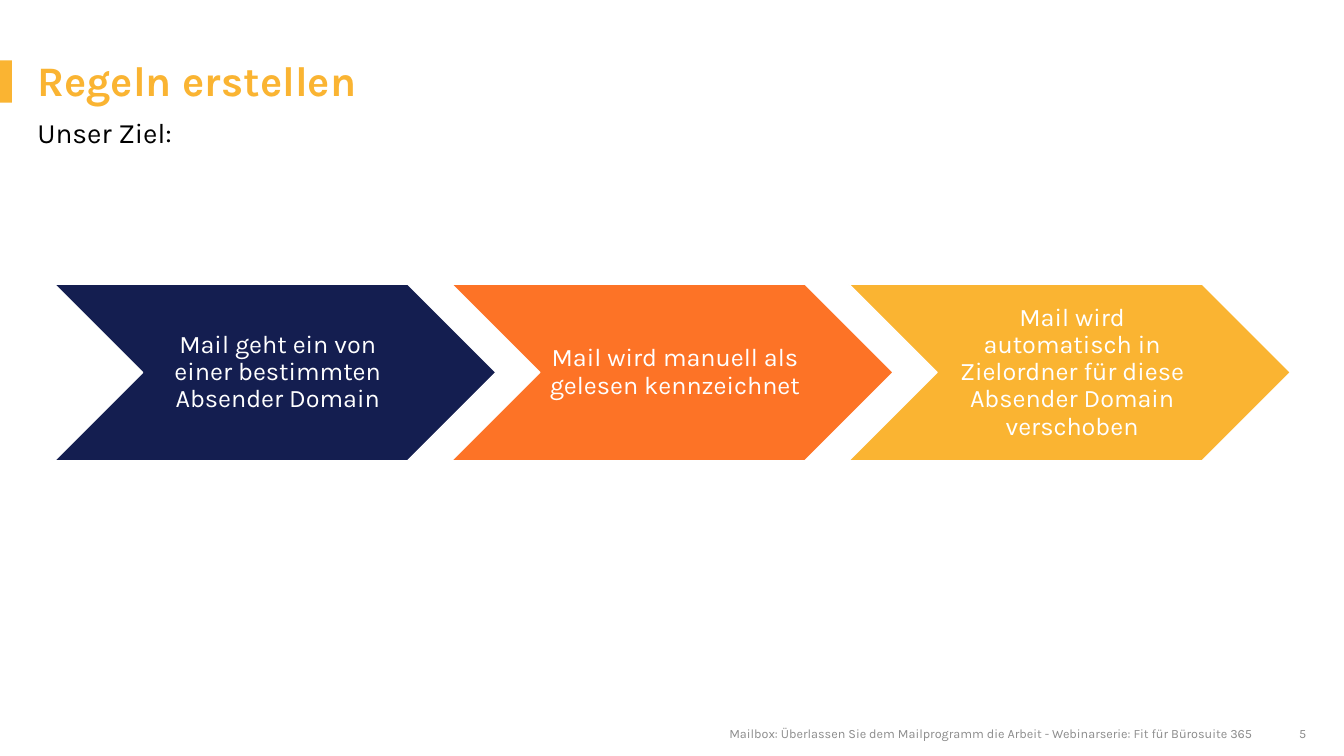
from dataclasses import dataclass

from pptx import Presentation
from pptx.dml.color import RGBColor
from pptx.enum.shapes import MSO_SHAPE
from pptx.enum.text import MSO_ANCHOR, MSO_AUTO_SIZE, PP_ALIGN
from pptx.util import Cm, Pt


@dataclass(frozen=True)
class Theme:
    font: str = "Karla"
    navy: str = "141E50"
    orange: str = "FD7326"
    yellow: str = "FAB432"
    white: str = "FFFFFF"
    black: str = "000000"
    gray: str = "8C8C8C"
    title_size: int = 30
    subtitle_size: int = 20
    step_size: int = 18
    footer_size: int = 9


theme = Theme()


def write_text(shape, text, size, color, bold=False, align=PP_ALIGN.LEFT,
               anchor=MSO_ANCHOR.TOP, wrap=True, line_spacing=0.9, margins=(0, 0, 0, 0)):
    frame = shape.text_frame
    frame.text = text
    frame.auto_size = MSO_AUTO_SIZE.NONE
    frame.word_wrap = wrap
    frame.vertical_anchor = anchor
    frame.margin_left, frame.margin_top, frame.margin_right, frame.margin_bottom = map(Cm, margins)
    paragraph = frame.paragraphs[0]
    paragraph.alignment = align
    paragraph.line_spacing = line_spacing
    paragraph.space_before = Pt(0)
    font = paragraph.runs[0].font
    font.name = theme.font
    font.size = Pt(size)
    font.bold = bold
    font.color.rgb = RGBColor.from_string(color)


presentation = Presentation()
presentation.slide_width = Cm(33.87)
presentation.slide_height = Cm(19.05)
slide = presentation.slides.add_slide(presentation.slide_layouts[5])

# Accent bar at the left edge
accent_bar = slide.shapes.add_shape(MSO_SHAPE.RECTANGLE, Cm(0), Cm(1.52), Cm(0.3), Cm(1.07))
accent_bar.shadow.inherit = False
accent_bar.fill.solid()
accent_bar.fill.fore_color.rgb = RGBColor.from_string(theme.yellow)
accent_bar.line.fill.background()

# Title and subtitle
title = slide.shapes.title
title.left, title.top, title.width, title.height = Cm(0.94), Cm(1.52), Cm(24.79), Cm(1.14)
write_text(title, "Regeln erstellen", theme.title_size, theme.yellow, bold=True)

subtitle = slide.shapes.add_textbox(Cm(0.94), Cm(3), Cm(24.79), Cm(0.76))
write_text(subtitle, "Unser Ziel:", theme.subtitle_size, theme.black)

# Process steps
steps = [
    ("Mail geht ein von einer bestimmten Absender Domain", theme.navy),
    ("Mail wird manuell als gelesen kennzeichnet", theme.orange),
    ("Mail wird automatisch in Zielordner für diese Absender Domain verschoben", theme.yellow),
]
for index, (text, color) in enumerate(steps):
    chevron = slide.shapes.add_shape(
        MSO_SHAPE.CHEVRON, Cm(1.37 + index * 10.01), Cm(7.16), Cm(11.13), Cm(4.45))
    chevron.shadow.inherit = False
    chevron.fill.solid()
    chevron.fill.fore_color.rgb = RGBColor.from_string(color)
    chevron.line.color.rgb = RGBColor.from_string(theme.white)
    chevron.line.width = Pt(1)
    write_text(chevron, text, theme.step_size, theme.white, align=PP_ALIGN.CENTER,
               anchor=MSO_ANCHOR.MIDDLE, margins=(0.2, 0.07, 0.07, 0.07))

# Footer and slide number, each set by its right edge
footers = [
    ("Mailbox: Überlassen Sie dem Mailprogramm die Arbeit - Webinarserie: Fit für Bürosuite 365",
     31.55, 16),
    ("5", 32.92, 0.6),
]
for text, right, width in footers:
    footer = slide.shapes.add_textbox(Cm(right - width), Cm(18.29), Cm(width), Cm(0.38))
    write_text(footer, text, theme.footer_size, theme.gray, align=PP_ALIGN.RIGHT,
               anchor=MSO_ANCHOR.BOTTOM, wrap=False, line_spacing=1.0)

presentation.save("out.pptx")
